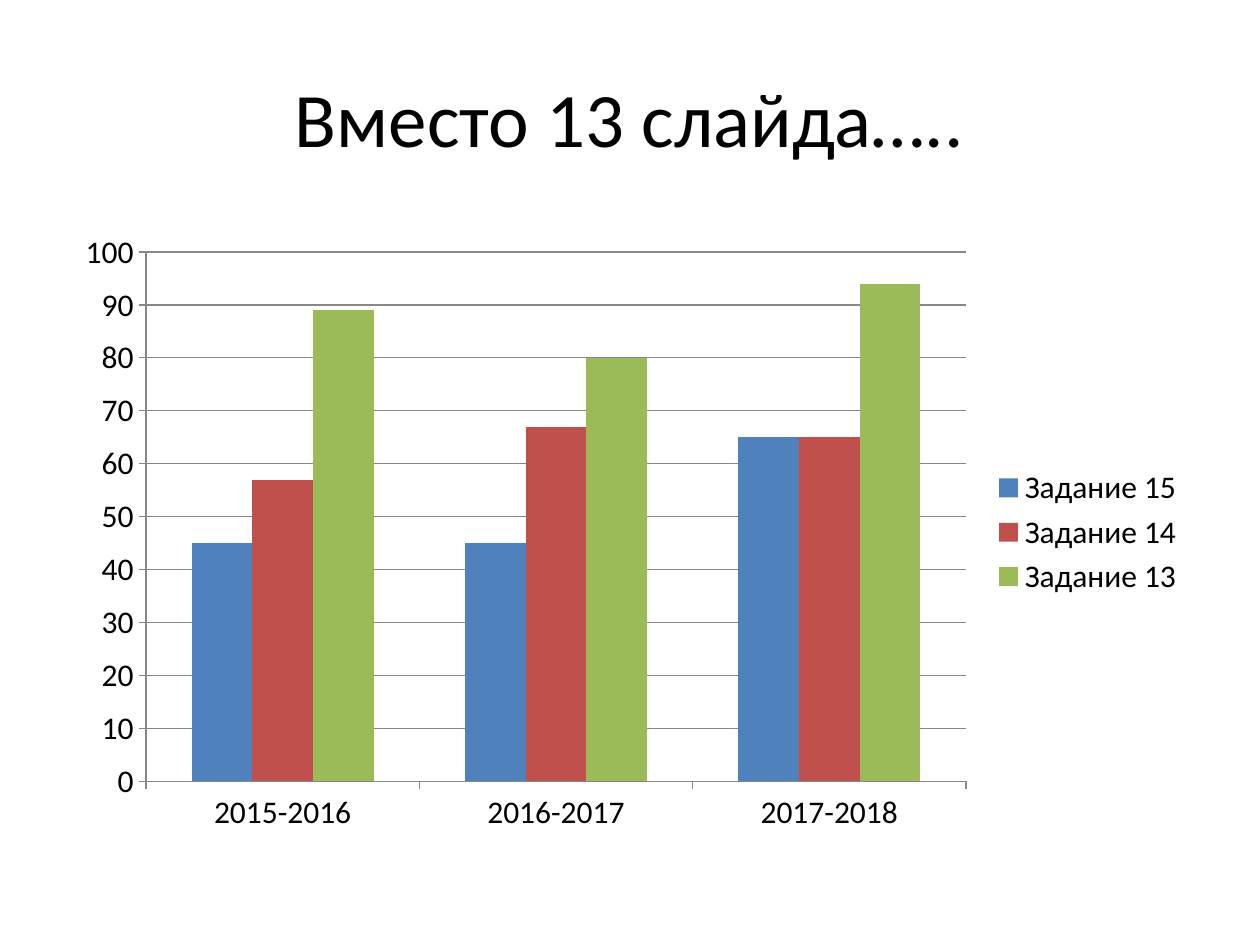
from pptx import Presentation
from pptx.chart.data import CategoryChartData
from pptx.dml.color import RGBColor
from pptx.enum.chart import XL_CHART_TYPE, XL_LEGEND_POSITION, XL_TICK_MARK
from pptx.enum.text import MSO_ANCHOR, PP_ALIGN
from pptx.util import Pt

PX = 9144  # EMU per px, 100 px to the inch
COLUMNS = XL_CHART_TYPE.COLUMN_CLUSTERED
RIGHT = XL_LEGEND_POSITION.RIGHT
OUTSIDE = XL_TICK_MARK.OUTSIDE
MIDDLE = MSO_ANCHOR.MIDDLE
CENTER = PP_ALIGN.CENTER
TITLE_ONLY = 5

YEARS = ["2015-2016", "2016-2017", "2017-2018"]
TASKS = [
    ("Задание 15", (45, 45, 65), "4F81BD"),
    ("Задание 14", (57, 67, 65), "C0504D"),
    ("Задание 13", (89, 80, 94), "9BBB59"),
]


def rgb(value):
    return RGBColor.from_string(value)


def box(*lengths):
    return [n * PX for n in lengths]


class Deck:
    font = "Calibri"
    ink = "000000"
    grey = "878787"

    def __init__(self, width, height):
        self.prs = Presentation()
        self.prs.slide_width, self.prs.slide_height = box(width, height)

    def add_slide(self):
        self.s = self.prs.slides.add_slide(self.prs.slide_layouts[TITLE_ONLY])

    def style(self, font, size):
        font.name = self.font
        font.size = Pt(size)
        font.color.rgb = rgb(self.ink)

    def title(self, text, x, y, w, h):
        sp = self.s.shapes.title
        sp.left, sp.top, sp.width, sp.height = box(x, y, w, h)
        tf = sp.text_frame
        tf.text = text
        tf.vertical_anchor = MIDDLE
        p = tf.paragraphs[0]
        p.alignment = CENTER
        self.style(p.font, 44)

    def line(self, fmt):
        fmt.line.color.rgb = rgb(self.grey)
        fmt.line.width = Pt(0.75)

    def column_chart(self, categories, series, x, y, w, h):
        data = CategoryChartData()
        data.categories = categories
        for name, values, _ in series:
            data.add_series(name, values)
        chart = self.s.shapes.add_chart(COLUMNS, *box(x, y, w, h), data).chart
        chart.has_title = False
        self.style(chart.font, 18)

        # Columns
        plot = chart.plots[0]
        plot.gap_width = 150
        plot.overlap = 0
        plot.vary_by_categories = False
        for bars, (_, _, color) in zip(plot.series, series):
            bars.format.fill.solid()
            bars.format.fill.fore_color.rgb = rgb(color)

        # Axes and gridlines
        for axis in (chart.category_axis, chart.value_axis):
            axis.major_tick_mark = OUTSIDE
            self.line(axis.format)
        axis = chart.value_axis
        axis.minimum_scale, axis.maximum_scale, axis.major_unit = 0, 100, 10
        axis.has_major_gridlines = True
        self.line(axis.major_gridlines.format)

        # Legend
        chart.has_legend = True
        chart.legend.position = RIGHT
        chart.legend.include_in_layout = False


def main():
    deck = Deck(1000, 750)
    deck.add_slide()
    deck.title("Вместо 13 слайда…..", 50, 30, 900, 125)
    deck.column_chart(YEARS, TASKS, 50, 175, 900, 495)
    deck.prs.save("out.pptx")


if __name__ == "__main__":
    main()
